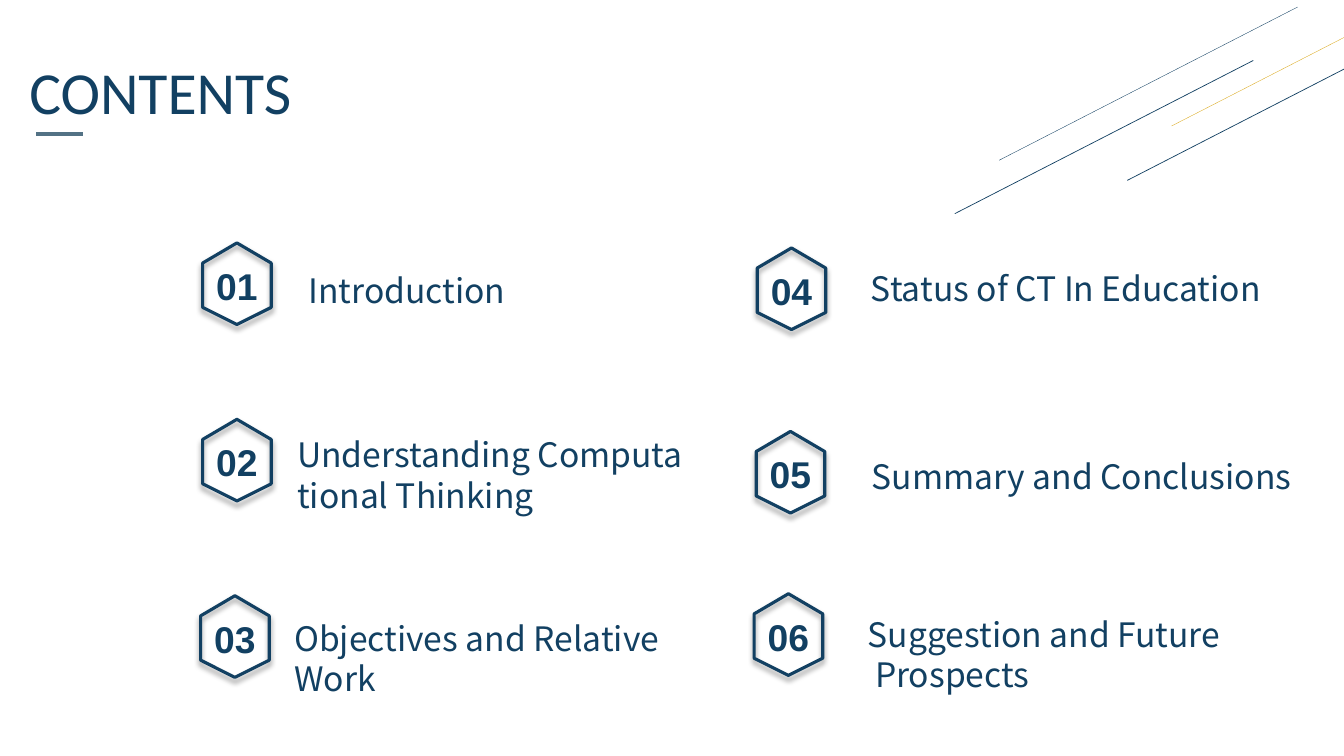
from lxml import etree
from pptx import Presentation, util as u
from pptx.dml.color import RGBColor
from pptx.enum import text as t, shapes as s
from pptx.oxml.ns import qn

PX = 9144  # 100 px to the inch
COLORS = {"navy": "124062", "slate": "537285", "gold": "DCAA1F", "black": "000000"}
BODY = "Noto Sans CJK SC"
HEX = [(34, 0), (68, 20), (68, 64), (34, 81), (0, 64), (0, 20)]

# badge corner, label box, label lines
ITEMS = [
    ((201, 241), (296, 263, 261, 50), ["Introduction"]),
    ((201, 416), (285, 426, 443, 91), ["Understanding Computa", "tional Thinking"]),
    ((199, 591), (282, 608, 510, 91), ["Objectives and Relative", "Work"]),
    ((751, 246), (854, 261, 448, 95), ["Status of CT In Education"]),
    ((750, 428), (855, 447, 478, 136), ["Summary and Conclusions"]),
    ((748, 589), (851, 604, 412, 121), ["Suggestion and Future", "Prospects"]),
]
# start, colour, width in points
STREAKS = [
    ((947, 212), "navy", 0.5),
    ((991, 159), "navy", 0.25),
    ((1118, 179), "navy", 0.5),
    ((1162, 125), "gold", 0.25),
]


def px(*nums):
    return [u.Emu(round(n * PX)) for n in nums]


def rgb(name):
    return RGBColor.from_string(COLORS[name])


def write(shape, lines, size, face, bold=False, align=t.PP_ALIGN.LEFT):
    frame = shape.text_frame
    frame.auto_size = t.MSO_AUTO_SIZE.NONE
    frame.vertical_anchor = t.MSO_ANCHOR.TOP
    frame.word_wrap = True
    frame.text = "\n".join(lines)
    for para in frame.paragraphs:
        para.alignment = align
        font = para.runs[0].font
        font.size, font.name, font.bold = u.Pt(size), face, bold
        font.color.rgb = rgb("navy")
    return frame


def line(slide, start, end, color, width):
    link = slide.shapes.add_connector(s.MSO_CONNECTOR.STRAIGHT, *px(*start, *end))
    link.line.color.rgb = rgb(color)
    link.line.width = u.Pt(width)
    etree.SubElement(link._element.spPr, qn("a:effectLst"))


def shade(shape):
    """Give the shape a soft shadow straight below it."""
    shape.shadow.inherit = False
    glow = shape._element.spPr.find(qn("a:effectLst"))
    drop = etree.SubElement(glow, qn("a:outerShdw"), blurRad=str(u.Pt(4)),
                            dist=str(u.Pt(3)), dir="5400000", rotWithShape="0")
    tint = etree.SubElement(drop, qn("a:srgbClr"), val=COLORS["black"])
    etree.SubElement(tint, qn("a:alpha"), val="40000")


def badge(slide, x, y, num):
    pts = [(x + dx, y + dy) for dx, dy in HEX]
    pen = slide.shapes.build_freeform(*pts[0], scale=PX)
    pen.add_line_segments(pts[1:], close=True)
    edge = pen.convert_to_shape()
    edge.fill.background()
    edge.line.color.rgb = rgb("navy")
    edge.line.width = u.Pt(2.25)
    shade(edge)
    box = slide.shapes.add_textbox(*px(x + 3, y + 15, 62, 55))
    write(box, [f"{num:02}"], 26.6, "Arial", True, t.PP_ALIGN.CENTER)


def label(slide, box, lines):
    shape = slide.shapes.add_textbox(*px(*box))
    return write(shape, lines, 24, BODY)


def header(slide, x, y, w, h):
    title = slide.shapes.title
    title.left, title.top, title.width, title.height = px(x, y, w, h)
    write(title, ["CONTENTS"], 42.6, "Calibri")
    line(slide, (x + 17, y + 84), (x + 63, y + 84), "slate", 2.25)


def streaks(slide, w, h):
    for (x, y), color, width in STREAKS:
        line(slide, (x, y), (x + w, y - h), color, width)


def agenda(slide):
    for num, (spot, box, lines) in enumerate(ITEMS, 1):
        badge(slide, *spot, num)
        frame = label(slide, box, lines)
    # the closing line of the last entry sits slightly indented
    frame.paragraphs[-1]._p.get_or_add_pPr().set("marL", str(7 * PX))


def main():
    deck = Presentation()
    deck.slide_width, deck.slide_height = px(1333, 750)
    slide = deck.slides.add_slide(deck.slide_layouts[5])
    header(slide, 19, 49, 366, 82)
    streaks(slide, 296, 152)
    agenda(slide)
    deck.save("out.pptx")


if __name__ == "__main__":
    main()
